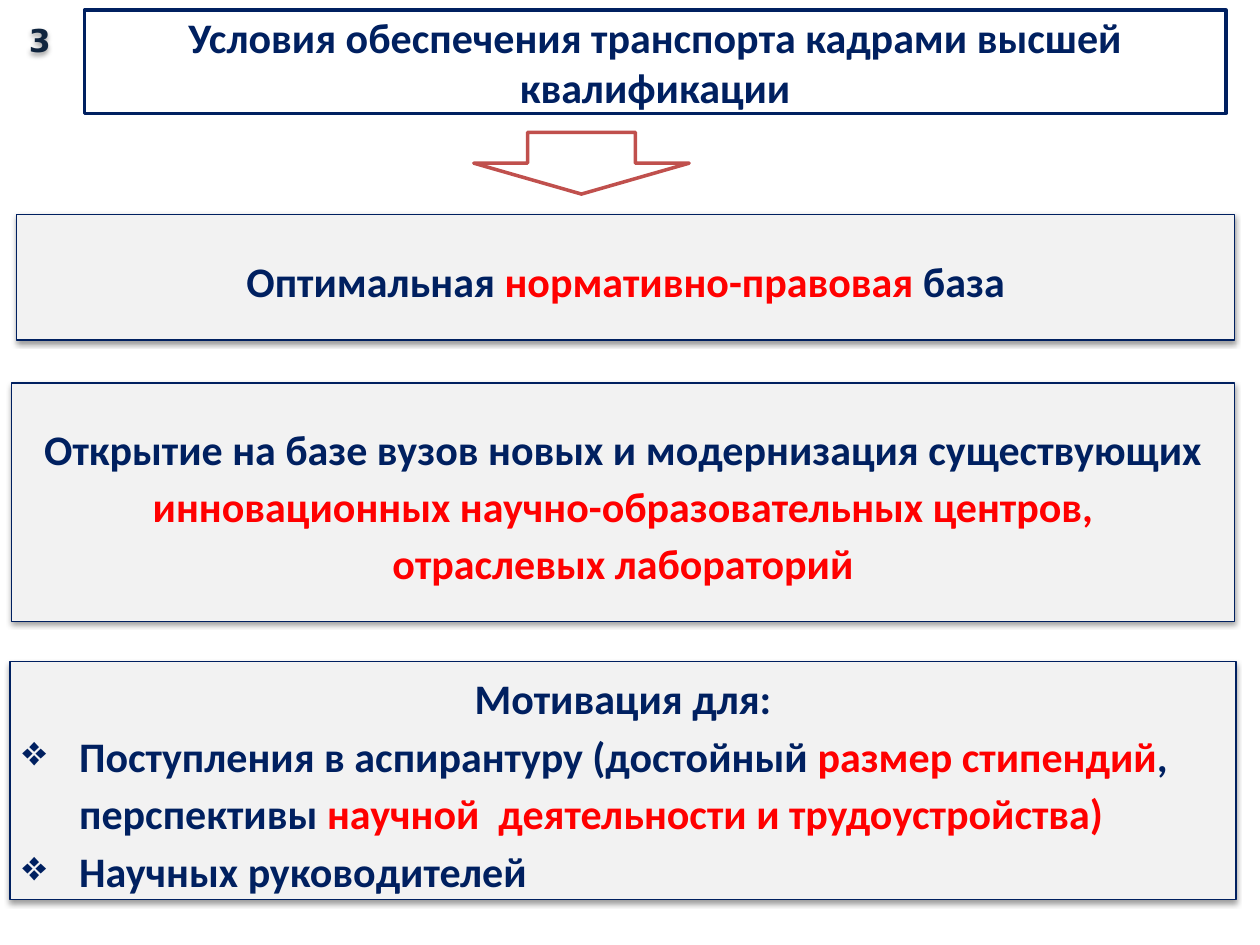
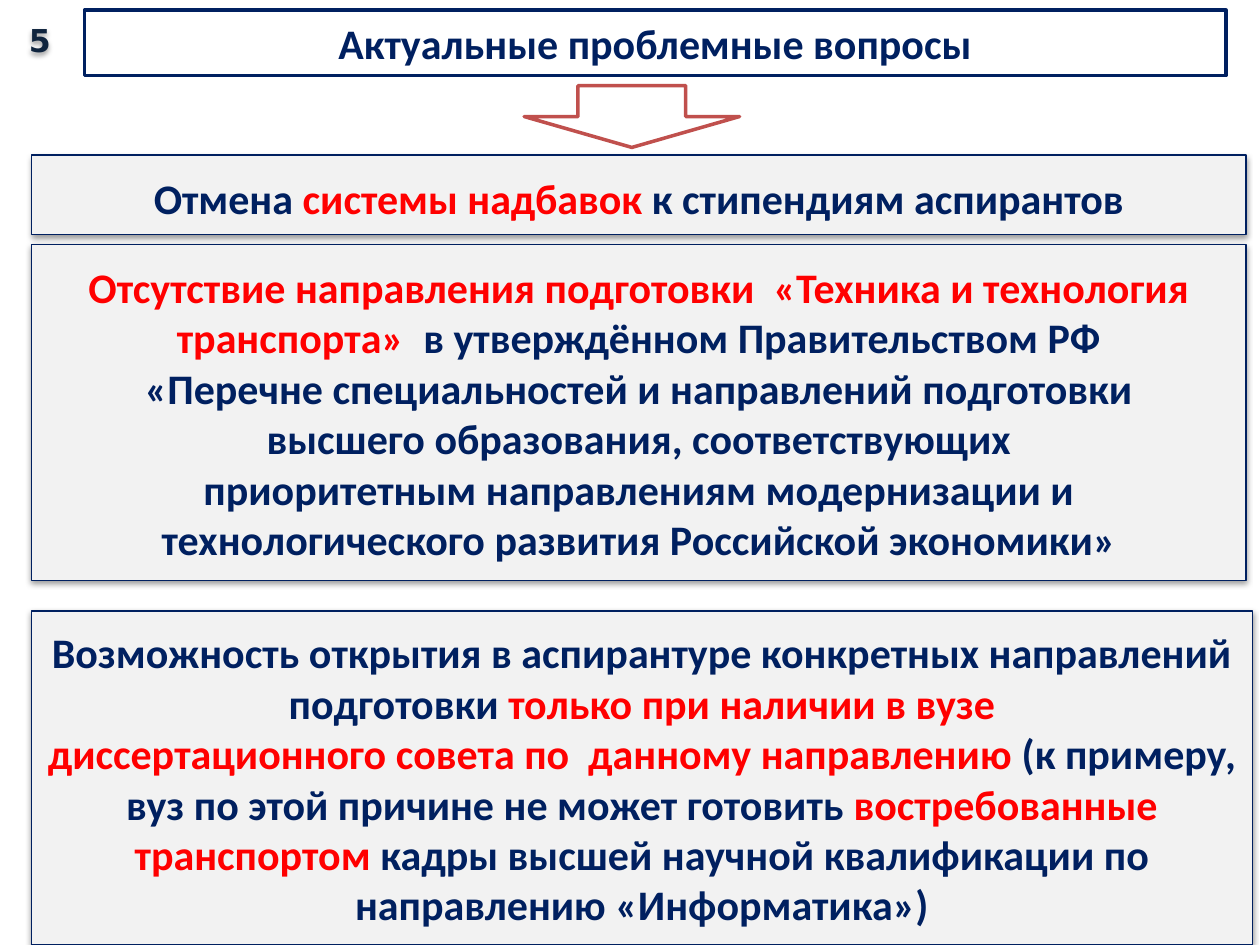
from lxml import etree
from pptx import Presentation
from pptx import util as u
from pptx.dml.color import RGBColor
from pptx.enum import shapes, text
from pptx.oxml import ns

COLORS = {"navy": "002060", "red": "FF0000", "panel": "F2F2F2", "white": "FFFFFF",
          "arrow": "C0504D", "number": "0F243E", "shadow": "000000"}
FONT, NUMBER_FONT = "Calibri", "DejaVu Sans"
Inches, Pt = u.Inches, u.Pt


def rgb(name):
    return RGBColor.from_string(COLORS[name])


def sub(parent, tag, **attrs):
    return etree.SubElement(parent, ns.qn(tag), {k: str(v) for k, v in attrs.items()})


def write(p, txt, size=24, font=FONT, color="navy", accent="red", bold=True,
          align=text.PP_ALIGN.CENTER, spacing=None, bullet=None, indent=0.45):
    """Fill a paragraph; *marked* parts take the accent colour, newlines break the line."""
    p.alignment = align
    if spacing:
        p.line_spacing = Pt(spacing)
    if bullet:
        pPr = p._p.get_or_add_pPr()
        pPr.set("marL", str(Inches(indent)))
        pPr.set("indent", str(-Inches(indent)))
        sub(pPr, "a:buChar", char=bullet)
    for i, part in enumerate(txt.split("*")):
        for j, piece in enumerate(part.split("\n")):
            if j:
                p.add_line_break()
            if piece:
                r = p.add_run()
                r.text = piece
                r.font.size, r.font.name, r.font.bold = Pt(size), font, bold
                r.font.color.rgb = rgb(accent if i % 2 else color)


class Deck:
    def __init__(self):
        self.prs = Presentation()
        self.prs.slide_width, self.prs.slide_height = Inches(10), Inches(7.5)
        self.s = None

    def new_slide(self, number, title_lines, title_height):
        self.s = self.prs.slides.add_slide(self.prs.slide_layouts[5])
        self.title(title_lines, title_height)
        self.number(number)

    def style(self, sp, fill, line, width):
        sp.fill.solid()
        sp.fill.fore_color.rgb = rgb(fill)
        sp.line.color.rgb = rgb(line)
        sp.line.width = Pt(width)

    def shadow(self, sp):
        sp.shadow.inherit = False
        effects = sp._element.spPr.find(ns.qn("a:effectLst"))
        outer = sub(effects, "a:outerShdw", blurRad=Pt(3.1), dist=Pt(1.6),
                    dir=5400000, rotWithShape=0)
        sub(sub(outer, "a:srgbClr", val=COLORS["shadow"]), "a:alpha", val=38000)

    def fill_text(self, tf, lines, **fmt):
        tf.vertical_anchor = text.MSO_ANCHOR.MIDDLE
        tf.auto_size = text.MSO_AUTO_SIZE.NONE
        for i, line in enumerate(lines):
            p = tf.add_paragraph() if i else tf.paragraphs[0]
            own = {}
            if line.startswith("❖"):
                line = line[1:]
                own = {"bullet": "❖", "align": text.PP_ALIGN.LEFT}
            write(p, line, **{**fmt, **own})

    def title(self, lines, height):
        sp = self.s.shapes.title
        sp.left, sp.top, sp.width, sp.height = map(Inches, (0.67, 0.08, 9.06, height))
        self.style(sp, "white", "navy", 2)
        tf = sp.text_frame
        tf.margin_left = tf.margin_right = Inches(0.06)
        tf.margin_top = tf.margin_bottom = Inches(0.03)
        self.fill_text(tf, lines)

    def number(self, value):
        sp = self.s.shapes.add_textbox(*map(Inches, (0.12, 0.11, 0.39, 0.41)))
        sp.text_frame.word_wrap = True
        self.fill_text(sp.text_frame, [value], size=18, font=NUMBER_FONT, color="number")
        self.shadow(sp)

    def arrow(self, left, top):
        sp = self.s.shapes.add_shape(shapes.MSO_SHAPE.DOWN_ARROW,
                                     *map(Inches, (left, top, 1.71, 0.49)))
        self.style(sp, "white", "arrow", 2)
        sp.shadow.inherit = False

    def panel(self, left, top, width, height, lines, spacing=32.8, wrap=False):
        sp = self.s.shapes.add_shape(shapes.MSO_SHAPE.RECTANGLE,
                                     *map(Inches, (left, top, width, height)))
        self.style(sp, "panel", "navy", 0.75)
        self.shadow(sp)
        sp.text_frame.word_wrap = wrap
        self.fill_text(sp.text_frame, lines, spacing=spacing)


def main():
    deck = Deck()

    # Conditions for staffing
    deck.new_slide("3", ["Условия обеспечения транспорта кадрами высшей",
                         "квалификации"], 0.82)
    deck.arrow(3.76, 1.05)
    deck.panel(0.13, 1.7, 9.67, 1, ["Оптимальная *нормативно-правовая* база"])
    deck.panel(0.09, 3.04, 9.71, 1.89, [
        "Открытие на базе вузов новых и модернизация существующих",
        "*инновационных научно-образовательных центров,*",
        "*отраслевых лабораторий*"])
    deck.panel(0.08, 5.25, 9.73, 1.89, [
        "Мотивация для:",
        "❖Поступления в аспирантуру (достойный *размер стипендий*,\n"
        "перспективы *научной  деятельности и трудоустройства)*",
        "❖Научных руководителей"], wrap=True)

    # Open issues
    deck.new_slide("5", ["Актуальные проблемные вопросы"], 0.52)
    deck.arrow(4.16, 0.68)
    deck.panel(0.25, 1.23, 9.64, 0.63,
               ["Отмена *системы надбавок* к стипендиям аспирантов"])
    deck.panel(0.25, 1.94, 9.64, 2.67, [
        "*Отсутствие направления подготовки  «Техника и технология*",
        "*транспорта»*  в утверждённом Правительством РФ",
        "«Перечне специальностей и направлений подготовки",
        "высшего образования, соответствующих",
        "приоритетным направлениям модернизации и",
        "технологического развития Российской экономики»"], spacing=28.8)
    deck.panel(0.25, 4.85, 9.69, 2.65, [
        "Возможность открытия в аспирантуре конкретных направлений",
        "подготовки *только при наличии в вузе*",
        "*диссертационного совета по  данному направлению* (к примеру,",
        "вуз по этой причине не может готовить *востребованные*",
        "*транспортом* кадры высшей научной квалификации по",
        "направлению «Информатика»)"], spacing=28.8)

    deck.prs.save("out.pptx")


if __name__ == "__main__":
    main()
